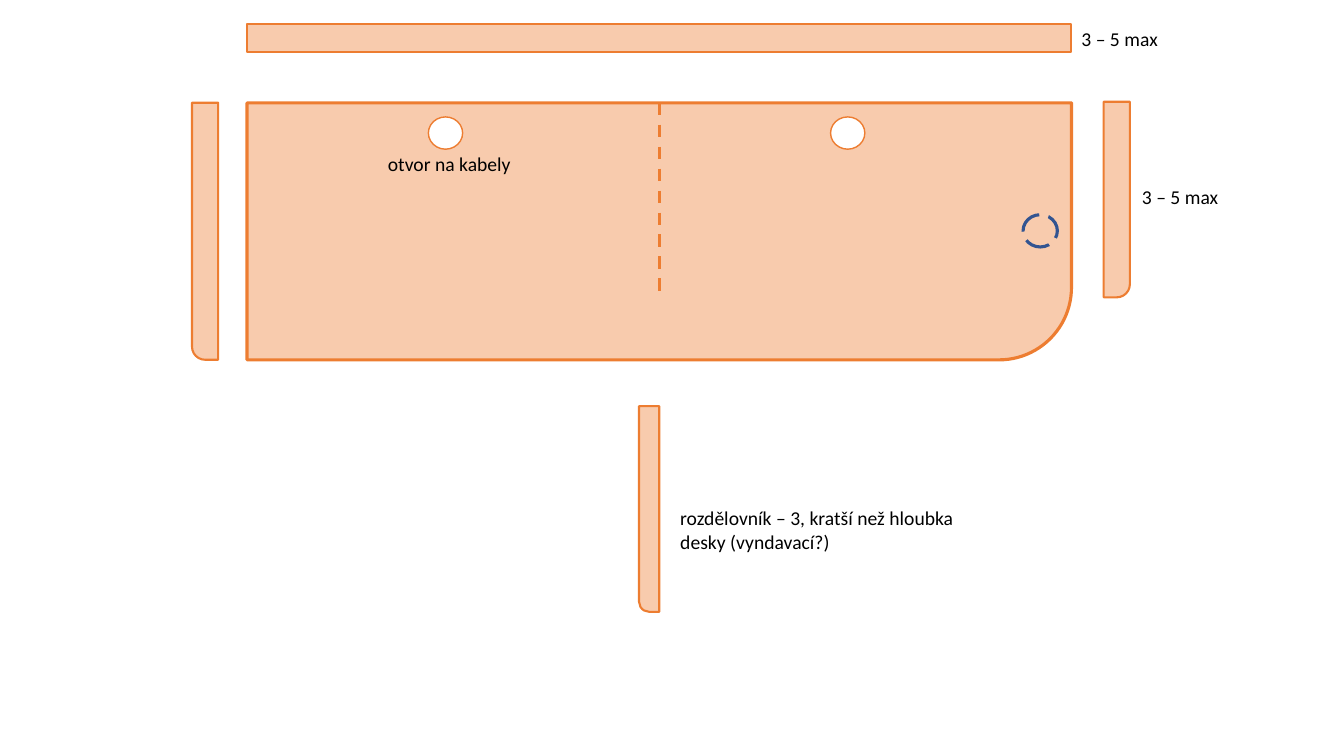
"""Build a slide with the plan and edge panels of a desk top."""
from dataclasses import dataclass

from pptx import Presentation
from pptx.dml.color import RGBColor
from pptx.enum.dml import MSO_LINE
from pptx.enum.shapes import MSO_CONNECTOR, MSO_SHAPE
from pptx.enum.text import MSO_AUTO_SIZE
from pptx.oxml.ns import qn
from pptx.oxml.xmlchemy import OxmlElement
from pptx.util import Pt

RECTANGLE = MSO_SHAPE.RECTANGLE
ONE_ROUND_CORNER = MSO_SHAPE.ROUND_1_RECTANGLE
OVAL = MSO_SHAPE.OVAL
STRAIGHT = MSO_CONNECTOR.STRAIGHT
DASH = MSO_LINE.DASH
LONG_DASH = MSO_LINE.LONG_DASH
FIT_TEXT = MSO_AUTO_SIZE.SHAPE_TO_FIT_TEXT

WOOD, EDGE, WHITE, BLUE, BLACK = "F8CBAD", "ED7D31", "FFFFFF", "325491", "000000"
BOARD_LEFT, BOARD_TOP, BOARD_WIDTH, BOARD_DEPTH = 176.4, 73.44, 588.96, 183.6
HOLE_WIDTH, HOLE_HEIGHT, HOLE_TOP = 24.48, 23.04, 83.52
LABEL_HEIGHT = 24.48


@dataclass
class Part:
    """One outlined piece of the desk, placed before rotation."""
    kind: MSO_SHAPE
    left: float
    top: float
    width: float
    height: float
    fill: str | None = WOOD
    edge: str = EDGE
    weight: float = 1.5
    dash: MSO_LINE | None = None
    rotation: float = 0
    flips: tuple[str, ...] = ()
    corner: float | None = None


@dataclass
class Label:
    """One text note."""
    text: str
    left: float
    top: float
    width: float
    height: float = LABEL_HEIGHT


def side_panel(left: float, top: float, width: float, height: float,
               flips: tuple[str, ...] = ("flipH",)) -> Part:
    """Describe an upright panel with one rounded lower corner."""
    return Part(ONE_ROUND_CORNER, left, top, width, height,
                rotation=270, flips=flips, corner=0.5)


def cable_hole(left: float) -> Part:
    """Describe a cable hole in the board."""
    return Part(OVAL, left, HOLE_TOP, HOLE_WIDTH, HOLE_HEIGHT, WHITE, weight=1)


BOARD = Part(ONE_ROUND_CORNER, BOARD_LEFT, BOARD_TOP, BOARD_WIDTH, BOARD_DEPTH,
             weight=2.25, rotation=180, flips=("flipH",), corner=0.282)
PARTS = [
    cable_hole(306),
    cable_hole(593.28),
    Part(OVAL, 730.8, 153.36, HOLE_WIDTH, HOLE_HEIGHT, None, BLUE, 2.25, LONG_DASH),
    side_panel(54.72, 155.8, BOARD_DEPTH, 18.72),
    side_panel(390.24, 356.4, 146.88, 14.4),
    side_panel(727.92, 133.2, 139.68, 18.72, ("flipH", "flipV")),
    Part(RECTANGLE, BOARD_LEFT, 17.28, BOARD_WIDTH, 20.16),
]
LABELS = [
    Label("3 – 5 max", 808.56, 128.88, 70.56),
    Label("3 – 5 max", 765.36, 15.84, 70.56),
    Label("rozdělovník – 3, kratší než hloubka desky (vyndavací?)",
          478.8, 357.84, 228.96, 41.04),
    Label("otvor na kabely", 270, 105.12, 119.52),
]


def color(value: str) -> RGBColor:
    """Turn a hex string into a colour."""
    return RGBColor.from_string(value)


def format_line(line, edge: str, weight: float, dash: MSO_LINE | None) -> None:
    """Set the colour, width and dash of a line."""
    line.color.rgb = color(edge)
    for name, value in {"width": Pt(weight), "dash_style": dash}.items():
        setattr(line, name, value)


def draw_part(slide, part: Part) -> None:
    """Draw one piece of the desk."""
    shape = slide.shapes.add_shape(part.kind, Pt(part.left), Pt(part.top),
                                   Pt(part.width), Pt(part.height))
    shape.shadow.inherit = False
    shape.rotation = part.rotation
    if part.corner is not None:
        shape.adjustments[0] = part.corner
    for flip in part.flips:
        shape.element.spPr.find(qn("a:xfrm")).set(flip, "1")
    if part.fill:
        shape.fill.solid()
        shape.fill.fore_color.rgb = color(part.fill)
    else:
        shape.fill.background()
    format_line(shape.line, part.edge, part.weight, part.dash)


def draw_divider_line(slide) -> None:
    """Draw the dashed divider position across the board."""
    middle = Pt(BOARD_LEFT + BOARD_WIDTH / 2)
    divider = slide.shapes.add_connector(STRAIGHT, middle, Pt(BOARD_TOP), middle, Pt(212.4))
    format_line(divider.line, EDGE, 2.25, DASH)
    divider.element.spPr.append(OxmlElement("a:effectLst"))


def draw_label(slide, label: Label) -> None:
    """Write one text note."""
    box = slide.shapes.add_textbox(Pt(label.left), Pt(label.top),
                                   Pt(label.width), Pt(label.height))
    for name, value in {"word_wrap": True, "auto_size": FIT_TEXT}.items():
        setattr(box.text_frame, name, value)
    run = box.text_frame.paragraphs[0].add_run()
    run.text = label.text
    for name, value in {"name": "Calibri", "size": Pt(14)}.items():
        setattr(run.font, name, value)
    run.font.color.rgb = color(BLACK)


def main() -> None:
    """Build and save the presentation."""
    presentation = Presentation()
    presentation.slide_width, presentation.slide_height = Pt(960), Pt(540)
    slide = presentation.slides.add_slide(presentation.slide_layouts[6])
    draw_part(slide, BOARD)
    draw_divider_line(slide)
    for part in PARTS:
        draw_part(slide, part)
    for label in LABELS:
        draw_label(slide, label)
    presentation.save("out.pptx")


if __name__ == "__main__":
    main()
